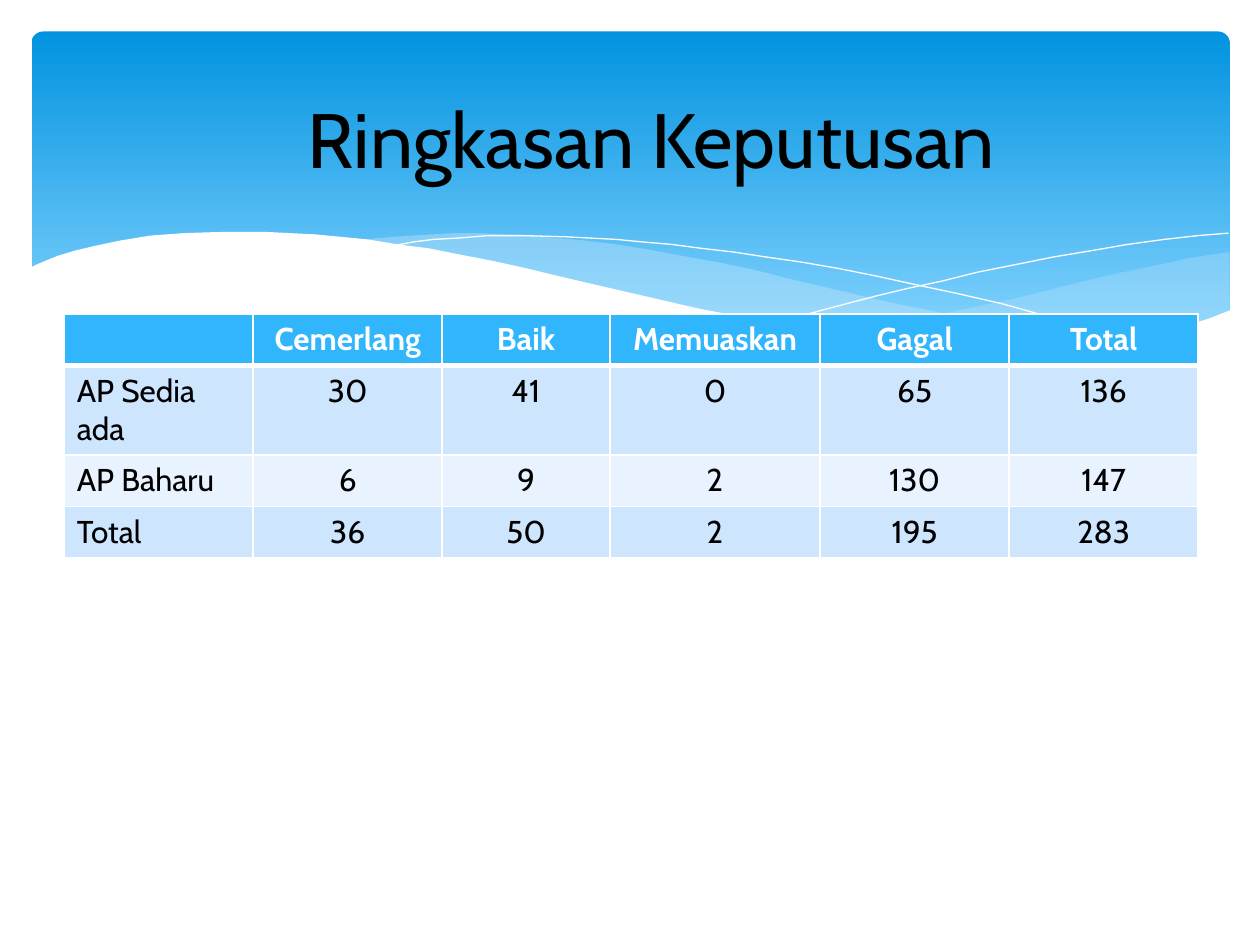
from lxml import etree
from pptx import Presentation
from pptx.dml.color import RGBColor
from pptx.enum.shapes import MSO_SHAPE as Kind
from pptx.enum.text import MSO_ANCHOR as Anchor, PP_ALIGN as Align
from pptx.oxml.ns import qn
from pptx.util import Inches, Pt

WHITE = RGBColor(0xFF, 0xFF, 0xFF)
BLACK = RGBColor(0, 0, 0)
DEEP = RGBColor(0x02, 0x93, 0xE0)
LIGHT = RGBColor(0x83, 0xD3, 0xFE)
MIST = RGBColor(0xC6, 0xE7, 0xFC)
HEAD = RGBColor(0x31, 0xB6, 0xFD)
BANDS = [RGBColor(0xE8, 0xF3, 0xFF), RGBColor(0xCE, 0xE5, 0xFE)]
FONT = "Cabin"

prs = Presentation()
prs.slide_width, prs.slide_height = Inches(10), Inches(7.5)
slide = prs.slides.add_slide(prs.slide_layouts[6])
shapes = slide.shapes


def add_wave(points, color=None, alpha=100):
    """Draw a filled wave, or an open white hairline when color is None."""
    spots = [(Inches(x), Inches(y)) for x, y in points]
    pen = shapes.build_freeform(*spots[0])
    pen.add_line_segments(spots[1:], close=color is not None)
    wave = pen.convert_to_shape()
    wave.shadow.inherit = False
    if color is None:
        wave.fill.background()
        wave.line.color.rgb = WHITE
        wave.line.width = Pt(0)
        return
    wave.line.fill.background()
    wave.fill.solid()
    wave.fill.fore_color.rgb = color
    if alpha < 100:
        tint = wave.fill._xPr.find(qn("a:solidFill"))[0]
        etree.SubElement(tint, qn("a:alpha"), val=str(alpha * 1000))


def add_edge(cell, side, width):
    """Give one side of a cell a white border."""
    edge = etree.SubElement(cell._tc.get_or_add_tcPr(), qn("a:ln" + side),
                            w=str(Pt(width)))
    fill = etree.SubElement(edge, qn("a:solidFill"))
    etree.SubElement(fill, qn("a:srgbClr"), val=str(WHITE))


# Banner
banner = shapes.add_shape(Kind.ROUNDED_RECTANGLE, Inches(0.25), Inches(0.25),
                          Inches(9.51), Inches(2.7))
banner.adjustments[0] = 0.034
banner.shadow.inherit = False
banner.line.fill.background()
banner.fill.gradient()
banner.fill.gradient_angle = 270
for stop, color, place in zip(banner.fill.gradient_stops, (DEEP, LIGHT), (0, 0.9)):
    stop.color.rgb = color
    stop.position = place

# Waves
add_wave([(9.76, 2), (9.48, 2.04), (9.21, 2.1), (8.91, 2.16), (8.61, 2.23),
          (8.05, 2.37), (7.53, 2.48), (7.06, 2.57), (6.61, 2.65), (6.91, 2.69),
          (7.19, 2.72), (7.45, 2.75), (7.69, 2.77), (8.03, 2.78), (8.35, 2.77),
          (8.63, 2.75), (8.89, 2.72), (9.13, 2.67), (9.35, 2.62), (9.49, 2.57),
          (9.63, 2.52), (9.76, 2.47)], MIST, 29)
add_wave([(8.93, 2.73), (8.66, 2.69), (8.37, 2.65), (8.07, 2.6), (7.75, 2.54),
          (7.41, 2.47), (7.06, 2.4), (6.68, 2.31), (6.29, 2.22), (5.98, 2.14),
          (5.69, 2.08), (5.41, 2.03), (5.14, 1.98), (4.89, 1.94), (4.65, 1.91),
          (4.42, 1.89), (4.2, 1.87), (3.99, 1.86), (3.8, 1.85), (3.61, 1.85),
          (3.28, 1.87), (2.99, 1.89), (2.86, 1.91), (3.23, 1.96), (3.62, 2.03),
          (4.04, 2.11), (4.49, 2.22), (4.91, 2.32), (5.3, 2.4), (5.66, 2.48),
          (6.01, 2.55), (6.34, 2.61), (6.65, 2.66), (6.95, 2.7), (7.22, 2.74),
          (7.48, 2.76), (7.73, 2.77), (7.96, 2.78), (8.28, 2.78), (8.57, 2.77),
          (8.76, 2.75)], MIST, 40)
add_wave([(3.09, 1.95), (3.18, 1.94), (3.28, 1.92), (3.44, 1.9), (3.63, 1.89),
          (3.87, 1.87), (4.16, 1.87), (4.5, 1.88), (4.89, 1.9), (5.1, 1.92),
          (5.33, 1.94), (5.56, 1.97), (5.82, 2), (6.08, 2.04), (6.36, 2.08),
          (6.65, 2.13), (6.95, 2.19), (7.27, 2.26), (7.6, 2.33), (7.95, 2.41),
          (8.31, 2.51), (8.69, 2.61), (9.07, 2.72)])
add_wave([(6.13, 2.57), (6.53, 2.46), (6.95, 2.35), (7.2, 2.29), (7.48, 2.23),
          (7.76, 2.16), (8.06, 2.1), (8.36, 2.04), (8.66, 1.99), (8.95, 1.94),
          (9.24, 1.9), (9.51, 1.87), (9.75, 1.85)])
add_wave([(9.77, 2.46), (9.59, 2.53), (9.4, 2.59), (9.2, 2.65), (8.99, 2.69),
          (8.75, 2.73), (8.5, 2.75), (8.23, 2.77), (7.93, 2.76), (7.61, 2.75),
          (7.26, 2.72), (6.88, 2.68), (6.48, 2.62), (6.03, 2.54), (5.55, 2.45),
          (5.03, 2.33), (4.47, 2.2), (4.18, 2.13), (3.91, 2.07), (3.65, 2.02),
          (3.4, 1.97), (3.16, 1.94), (2.92, 1.9), (2.71, 1.88), (2.5, 1.86),
          (2.3, 1.85), (2.11, 1.84), (1.77, 1.84), (1.46, 1.85), (1.19, 1.87),
          (0.95, 1.91), (0.76, 1.95), (0.59, 1.99), (0.46, 2.03), (0.36, 2.07),
          (0.29, 2.1), (0.23, 2.13), (0.23, 3.29), (9.77, 3.29)], WHITE)

# Results table
rows = [
    ["", "Cemerlang", "Baik", "Memuaskan", "Gagal", "Total"],
    ["AP Sedia ada", "30", "41", "0", "65", "136"],
    ["AP Baharu", "6", "9", "2", "130", "147"],
    ["Total", "36", "50", "2", "195", "283"],
]
widths = [1.5, 1.5, 1.33, 1.67, 1.5, 1.5]
table = shapes.add_table(len(rows), len(widths), Inches(0.51), Inches(2.49),
                         Inches(9), Inches(0.41 * len(rows))).table
for col, width in zip(table.columns, widths):
    col.width = Inches(width)
for r, row in enumerate(rows):
    table.rows[r].height = Inches(0.41)
    for c, text in enumerate(row):
        cell = table.cell(r, c)
        for side in "LRTB":
            thick = (r, side) in ((0, "B"), (1, "T"))
            add_edge(cell, side, 3 if thick else 1)
        cell.fill.solid()
        cell.fill.fore_color.rgb = BANDS[r % 2] if r else HEAD
        cell.text = text
        para = cell.text_frame.paragraphs[0]
        para.alignment = Align.LEFT if r and c == 0 else Align.CENTER
        para.font.name, para.font.size = FONT, Pt(18)
        para.font.bold = r == 0
        para.font.color.rgb = BLACK if r else WHITE

# Title
title = shapes.add_textbox(Inches(0.67), Inches(0.47), Inches(9), Inches(1.25))
frame = title.text_frame
frame.word_wrap = True
frame.vertical_anchor = Anchor.MIDDLE
para = frame.paragraphs[0]
para.text = "Ringkasan Keputusan"
para.alignment = Align.CENTER
para.font.name, para.font.size = FONT, Pt(44)
para.font.color.rgb = BLACK

prs.save("out.pptx")
